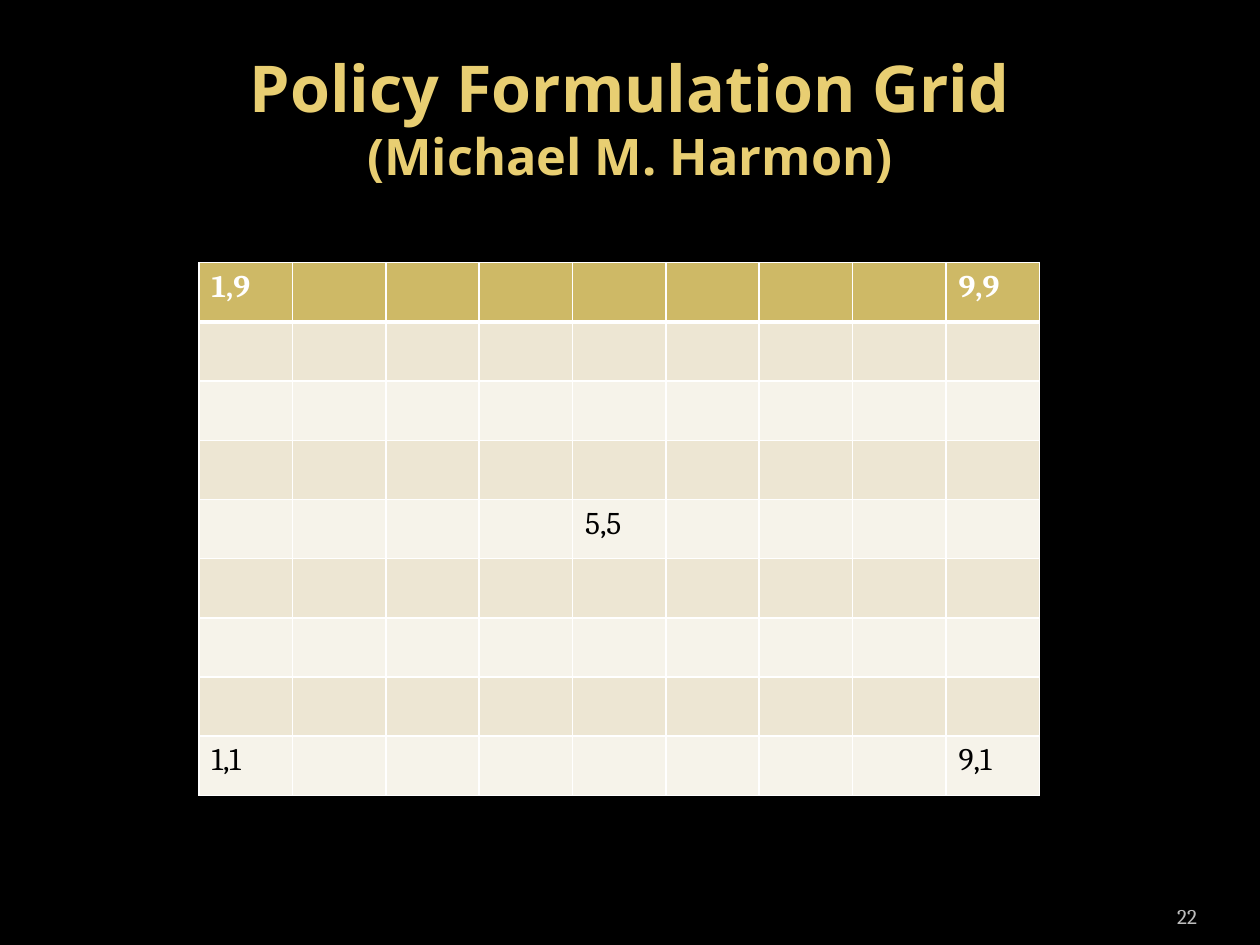
from lxml import etree
from pptx import Presentation
from pptx import util as u
from pptx.dml.color import RGBColor
from pptx.enum import text
from pptx.oxml.ns import qn

WIDTH, HEIGHT = 10, 7.5
GRID_SIZE = 9


def color(hex_string):
    return RGBColor.from_string(hex_string)


class GridSlide:
    """Style and current slide; boxes are (left, top, width, height) shares."""

    heading_font, body_font = "Noto Sans", "Cambria"
    background, heading, muted = "000000", "E8CE72", "BDBDBD"
    header_fill, bands = "CEB966", ("F6F3EA", "EDE6D3")
    header_text, body_text, line = "FFFFFF", "000000", "FFFFFF"

    def __init__(self, presentation):
        self.slide = presentation.slides.add_slide(presentation.slide_layouts[6])
        fill = self.slide.background.fill
        fill.solid()
        fill.fore_color.rgb = color(self.background)

    def place(self, box):
        scale = (WIDTH, HEIGHT, WIDTH, HEIGHT)
        return [u.Inches(share * side) for share, side in zip(box, scale)]

    def style(self, paragraph, name, hex_string, size=None, bold=False):
        font = paragraph.font
        font.name, font.bold = name, bold
        font.color.rgb = color(hex_string)
        if size:
            font.size = u.Pt(size)

    def text_box(self, box, anchor, align):
        frame = self.slide.shapes.add_textbox(*self.place(box)).text_frame
        frame.word_wrap = True
        frame.vertical_anchor = anchor
        paragraph = frame.paragraphs[0]
        paragraph.alignment = align
        return frame, paragraph

    def title(self, box, lines):
        _, paragraph = self.text_box(box, text.MSO_ANCHOR.MIDDLE, text.PP_ALIGN.CENTER)
        self.style(paragraph, self.heading_font, self.heading, bold=True)
        for index, (words, size) in enumerate(lines):
            if index:
                paragraph.add_line_break()
            run = paragraph.add_run()
            run.text = words
            run.font.size = u.Pt(size)

    def page_number(self, box, number):
        frame, paragraph = self.text_box(box, text.MSO_ANCHOR.BOTTOM, text.PP_ALIGN.RIGHT)
        frame.margin_left = frame.margin_right = 0
        paragraph.text = str(number)
        self.style(paragraph, self.body_font, self.muted, 12)

    def borders(self, cell, widths):
        properties = cell._tc.get_or_add_tcPr()
        for index, (side, points) in enumerate(widths.items()):
            border = etree.Element(qn(f"a:ln{side}"), w=str(u.Pt(points)))
            fill = etree.SubElement(border, qn("a:solidFill"))
            etree.SubElement(fill, qn("a:srgbClr"), val=self.line)
            properties.insert(index, border)

    def table(self, box, size, labels):
        left, top, width, height = self.place(box)
        table = self.slide.shapes.add_table(size, size, left, top, width, height).table
        for row in range(size):
            header = row == 0
            for column in range(size):
                cell = table.cell(row, column)
                cell.fill.solid()
                cell.fill.fore_color.rgb = color(
                    self.header_fill if header else self.bands[row % 2])
                # A thick rule separates the header from the body
                self.borders(cell, {"L": 1, "R": 1, "T": 3 if row == 1 else 1,
                                    "B": 3 if header else 1})
                # Labels are keyed by grid coordinates, counted from bottom left
                paragraph = cell.text_frame.paragraphs[0]
                paragraph.text = labels.get((column + 1, size - row), "")
                self.style(paragraph, self.body_font,
                           self.header_text if header else self.body_text, 18, header)


def main():
    presentation = Presentation()
    presentation.slide_width = u.Inches(WIDTH)
    presentation.slide_height = u.Inches(HEIGHT)
    page = GridSlide(presentation)

    # Heading
    page.title((0.05, 0.04, 0.9, 1 / 6),
               [("Policy Formulation Grid", 36.9), ("(Michael M. Harmon)", 28.8)])

    # Grid with its corners and centre labelled
    points = [(1, 9), (9, 9), (5, 5), (1, 1), (9, 1)]
    page.table((0.158, 0.278, 0.667, 0.564), GRID_SIZE,
               {point: f"{point[0]},{point[1]}" for point in points})

    # Footer
    page.page_number((0.867, 0.936, 0.083, 0.053), 22)

    presentation.save("out.pptx")


if __name__ == "__main__":
    main()
